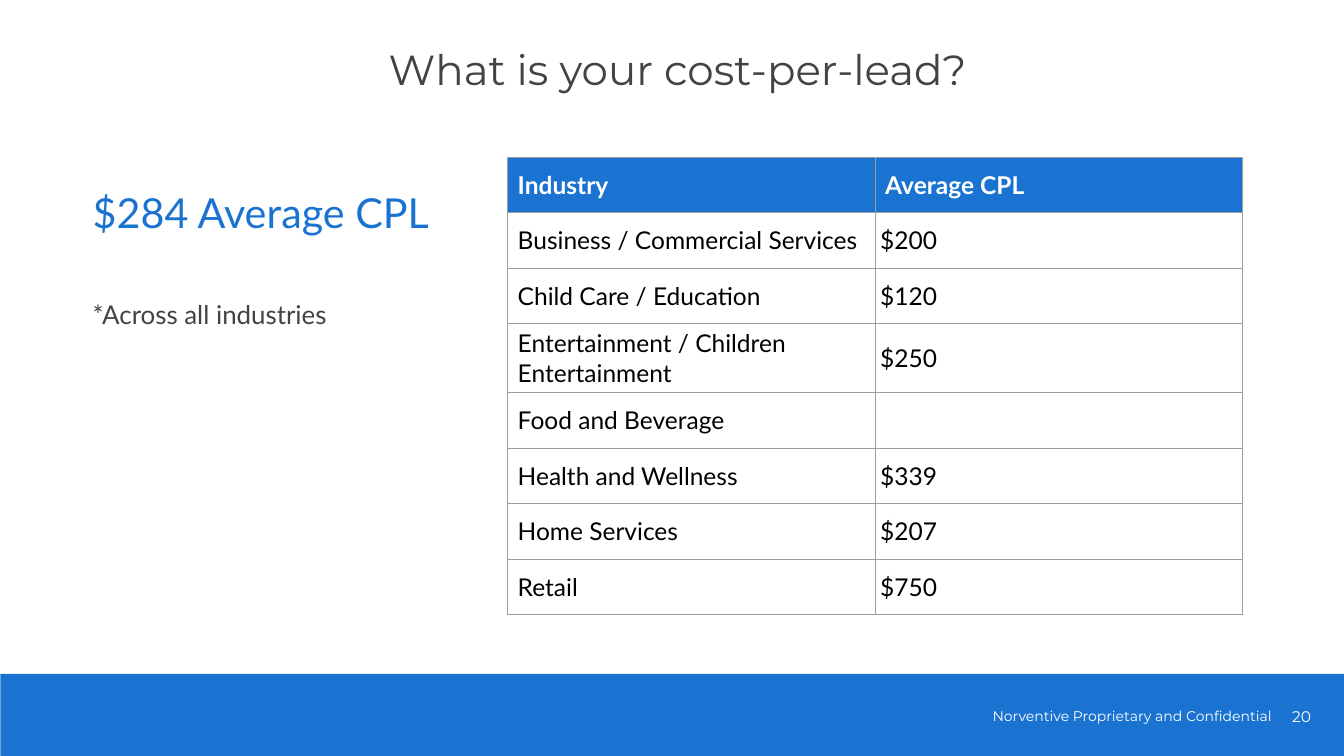
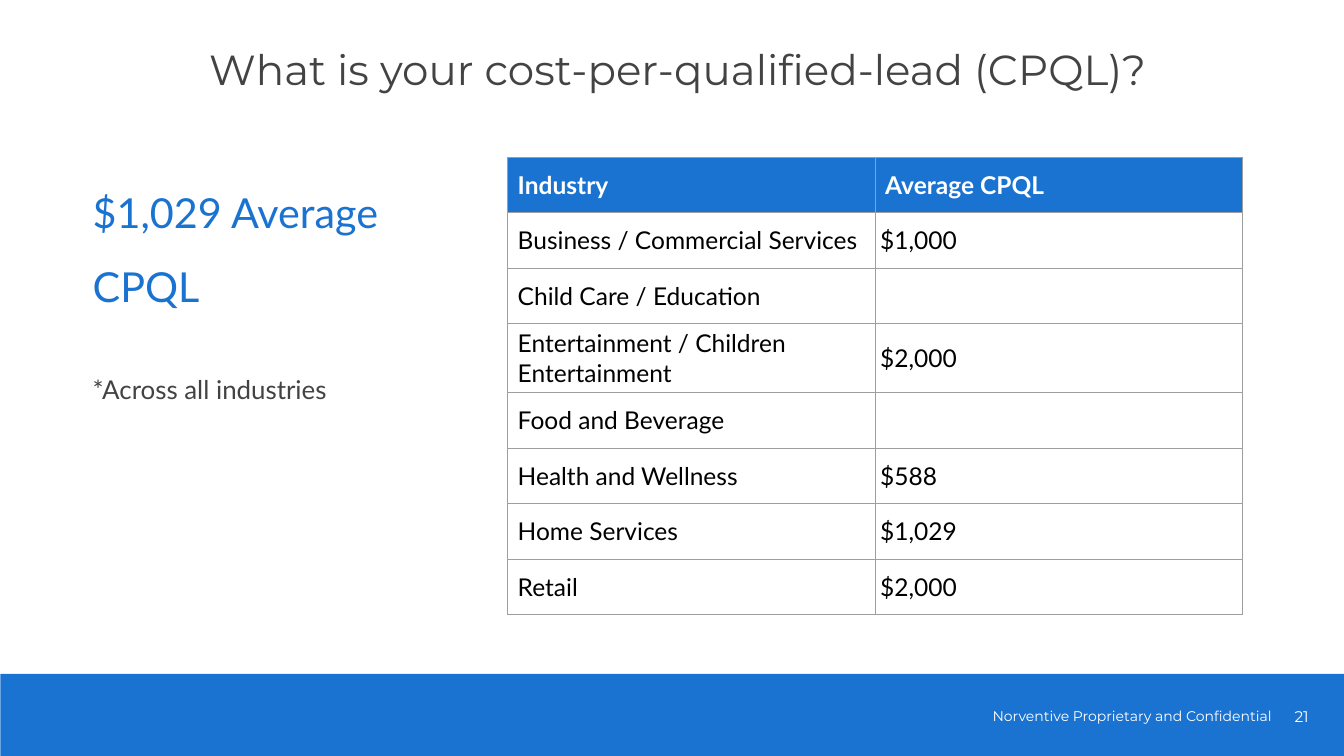
from typing import NamedTuple

from lxml import etree
from pptx import Presentation
from pptx.dml.color import RGBColor
from pptx.enum.shapes import MSO_SHAPE
from pptx.enum.text import MSO_ANCHOR, PP_ALIGN
from pptx.oxml.ns import qn
from pptx.util import Inches, Pt

RECT = MSO_SHAPE.RECTANGLE
TOP, MIDDLE = MSO_ANCHOR.TOP, MSO_ANCHOR.MIDDLE
LEFT, CENTER = PP_ALIGN.LEFT, PP_ALIGN.CENTER

COLORS = {
    "band": "1B73D1",
    "blue": "1A73D1",
    "gray": "434343",
    "white": "FFFFFF",
    "black": "000000",
    "grid": "9E9E9E",
}
HEAD, BODY = "Montserrat", "Lato"
PAD = Inches(0.1)
FOOTER = "Norventive Proprietary and Confidential"
INDUSTRIES = [
    "Business / Commercial Services",
    "Child Care / Education",
    "Entertainment / Children Entertainment",
    "Food and Beverage",
    "Health and Wellness",
    "Home Services",
    "Retail",
]
COL, ROW, TALL = 7.29, 1.1, 1.01
TALL_ROW = 3


class Style(NamedTuple):
    size: float
    font: str
    color: str
    bold: bool = False


class Box(NamedTuple):
    left: float
    top: float
    width: float
    height: float


class Page(NamedTuple):
    number: int
    title: str
    metric: str
    average: str
    costs: list[str]


TITLE = Style(60, HEAD, "gray")
FACT = Style(59, BODY, "blue")
NOTE = Style(37, BODY, "gray")
SMALL = Style(20, HEAD, "white")
NUMBER = Style(22, HEAD, "white")
HEADER = Style(35, BODY, "white", True)
CELL = Style(35, BODY, "black")

PAGES = [
    Page(20, "What is your cost-per-lead?", "CPL", "$284",
         ["$200", "$120", "$250", "", "$339", "$207", "$750"]),
    Page(21, "What is your cost-per-qualified-lead (CPQL)?", "CPQL", "$1,029",
         ["$1,000", "", "$2,000", "", "$588", "$1,029", "$2,000"]),
]


def rgb(name: str) -> RGBColor:
    return RGBColor.from_string(COLORS[name])


def add_run(para, text: str, style: Style) -> None:
    run = para.add_run()
    run.text = text
    font = run.font
    font.size, font.name, font.bold = Pt(style.size), style.font, style.bold
    font.color.rgb = rgb(style.color)


def add_box(slide, box: Box, anchor=TOP):
    """Add an empty, wrapping text box and return its frame."""
    frame = slide.shapes.add_textbox(*map(Inches, box)).text_frame
    frame.word_wrap = True
    frame.vertical_anchor = anchor
    frame.margin_left = frame.margin_right = PAD
    frame.margin_top = frame.margin_bottom = PAD
    return frame


def add_line(slide, box: Box, text: str, style: Style, align=LEFT, anchor=TOP) -> None:
    para = add_box(slide, box, anchor).paragraphs[0]
    para.alignment = align
    add_run(para, text, style)


def add_frame(slide, page: Page) -> None:
    """Draw the footer band, its texts and the title."""
    band = slide.shapes.add_shape(RECT, *map(Inches, Box(0.01, 13.37, 26.66, 1.63)))
    band.shadow.inherit = False
    band.fill.solid()
    band.fill.fore_color.rgb = rgb("band")
    band.line.fill.background()
    add_line(slide, Box(19.59, 13.93, 5.86, 0.54), FOOTER, SMALL, anchor=MIDDLE)
    add_line(slide, Box(1.94, 0.77, 23, 1.32), page.title, TITLE, CENTER)
    add_line(slide, Box(25.12, 13.7, 1.4, 1.01), str(page.number), NUMBER, CENTER, MIDDLE)


def add_fact(slide, page: Page) -> None:
    frame = add_box(slide, Box(1.74, 3.12, 7.06, 7.48))
    fact, note = frame.paragraphs[0], frame.add_paragraph()
    fact.line_spacing = note.line_spacing = 1.5
    note.space_before = Pt(67)
    add_run(fact, f"{page.average} Average {page.metric}", FACT)
    add_run(note, "*Across all industries", NOTE)


def add_grid(cell) -> None:
    """Give a cell its four borders."""
    props = cell._tc.get_or_add_tcPr()
    for side in ("lnL", "lnR", "lnT", "lnB"):
        line = etree.SubElement(props, qn(f"a:{side}"), w=str(Pt(0.75)))
        fill = etree.SubElement(line, qn("a:solidFill"))
        etree.SubElement(fill, qn("a:srgbClr"), val=COLORS["grid"])


def fill_cell(cell, text: str, head: bool, indent: bool) -> None:
    add_grid(cell)
    if head:
        cell.fill.solid()
        cell.fill.fore_color.rgb = rgb("blue")
    else:
        cell.fill.background()
    cell.vertical_anchor = MIDDLE
    cell.margin_left = cell.margin_right = PAD
    cell.margin_top = cell.margin_bottom = PAD
    para = cell.text_frame.paragraphs[0]
    if indent:
        props = para._p.get_or_add_pPr()
        props.set("marL", str(PAD))
        props.set("indent", "0")
    if text:
        add_run(para, text, HEADER if head else CELL)


def add_costs(slide, page: Page) -> None:
    rows = [("Industry", f"Average {page.metric}"), *zip(INDUSTRIES, page.costs)]
    high = ROW * (len(rows) - 1) + TALL
    box = Box(10.07, 3.12, 2 * COL, high)
    table = slide.shapes.add_table(len(rows), 2, *map(Inches, box)).table
    table.horz_banding = False
    for col in table.columns:
        col.width = Inches(COL)
    for i, row in enumerate(rows):
        table.rows[i].height = Inches(TALL if i == TALL_ROW else ROW)
        for j, text in enumerate(row):
            fill_cell(table.cell(i, j), text, i == 0, i == 0 or j == 0)


def main() -> None:
    deck = Presentation()
    deck.slide_width, deck.slide_height = Inches(26.66), Inches(15)
    blank = deck.slide_layouts[6]
    for page in PAGES:
        slide = deck.slides.add_slide(blank)
        add_frame(slide, page)
        add_fact(slide, page)
        add_costs(slide, page)
    deck.save("out.pptx")


if __name__ == "__main__":
    main()
